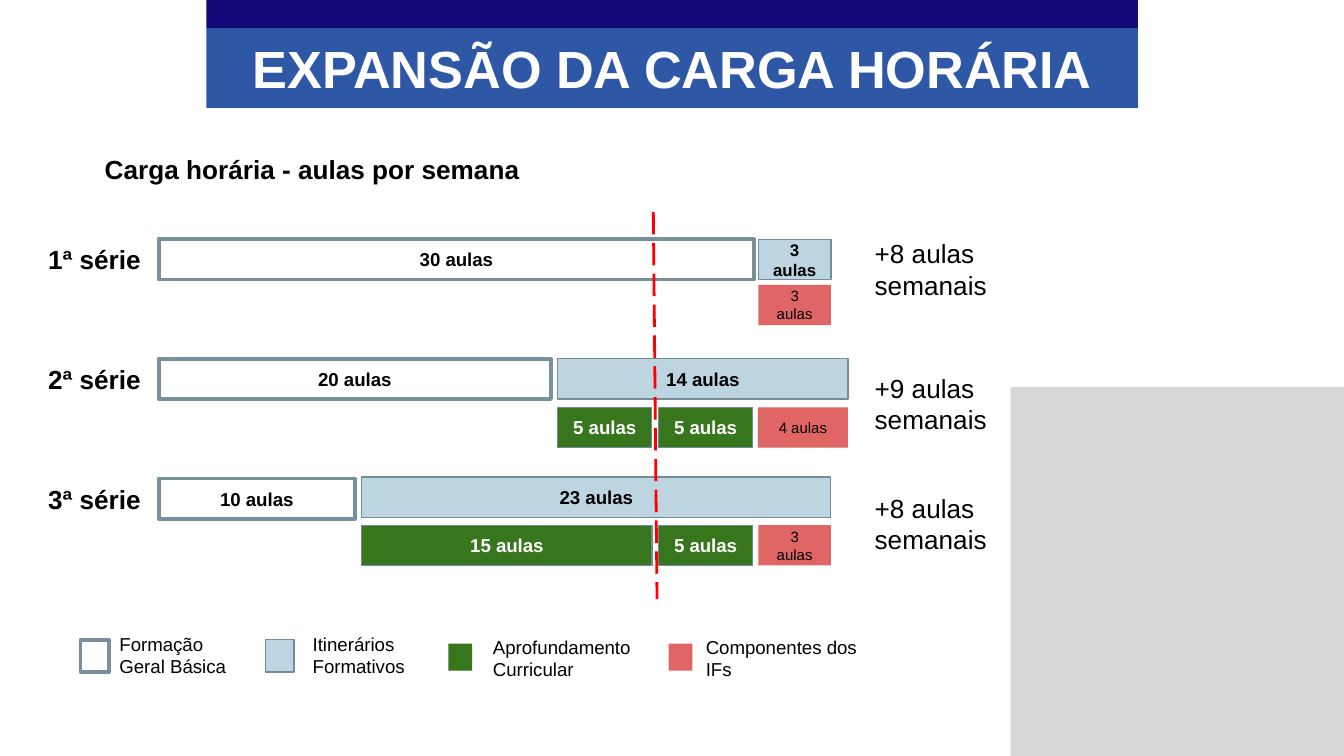
from lxml import etree
from pptx import Presentation
from pptx.dml.color import RGBColor
from pptx.enum.dml import MSO_LINE
from pptx.enum.shapes import MSO_CONNECTOR, MSO_SHAPE
from pptx.enum.text import MSO_ANCHOR, PP_ALIGN
from pptx.oxml.ns import qn
from pptx.util import Pt

RECT = MSO_SHAPE.RECTANGLE
STRAIGHT = MSO_CONNECTOR.STRAIGHT
DASH = MSO_LINE.LONG_DASH
MIDDLE, TOP = MSO_ANCHOR.MIDDLE, MSO_ANCHOR.TOP
LEFT, CENTER = PP_ALIGN.LEFT, PP_ALIGN.CENTER

WIDTH, HEIGHT = 720, 405
BAR = 21.6

COLORS = {
    "black": "000000", "white": "FFFFFF", "navy": "110979", "blue": "2E58A6",
    "sky": "BDD5E1", "green": "38761D", "coral": "E06666", "gray": "BFBFBF",
    "slate": "78909C", "edge": "748C98", "red": "FF0000",
}

# Each kind of class: fill, outline (colour, width) and label font
KINDS = {
    "base": ("white", ("slate", 2), {"size": 10, "bold": True}),
    "path": ("sky", ("edge", 0.75), {"size": 10, "bold": True}),
    "short": ("sky", ("edge", 0.75), {"size": 9, "bold": True}),
    "deep": ("green", ("edge", 0.75),
             {"size": 10, "bold": True, "color": "white"}),
    "part": ("coral", None, {"size": 8}),
}

# Top of bars, year, note, note shift, bars (kind, left, shift, width, label)
YEARS = [
    (128.2, "1ª série", "+8 aulas semanais", -8, [
        ("base", 85, 0, 319, "30 aulas"),
        ("short", 406.3, 0, 38.9, "3 aulas"),
        ("part", 406.3, 24.4, 38.9, "3 aulas")]),
    (192.2, "2ª série", "+9 aulas semanais", 0, [
        ("base", 85, 0, 210.2, "20 aulas"),
        ("path", 298.8, 0, 155.5, "14 aulas"),
        ("deep", 298.8, 26, 50.4, "5 aulas"),
        ("deep", 352.8, 26, 50.4, "5 aulas"),
        ("part", 406.1, 26, 48.2, "4 aulas")]),
    (256.4, "3ª série", "+8 aulas semanais", 0, [
        ("base", 85, 0, 105.1, "10 aulas"),
        ("path", 193.8, -0.8, 251.3, "23 aulas"),
        ("deep", 193.8, 25, 155.5, "15 aulas"),
        ("deep", 352.8, 25, 50.4, "5 aulas"),
        ("part", 406.3, 25, 38.9, "3 aulas")]),
]

# Fill, outline, swatch box, text box, lines
KEYS = [
    ("white", ("slate", 2), (43.2, 342.7, 15.3, 17.3),
     (56.9, 335.5, 75.6, 30.2), ["Formação", "Geral Básica"]),
    ("sky", ("edge", 0.75), (142.3, 342.7, 15.3, 17.3),
     (160.4, 335.5, 70.6, 30.2), ["Itinerários Formativos"]),
    ("green", None, (240.3, 344.9, 12.7, 14.4),
     (257, 337, 99.4, 30.2), ["Aprofundamento Curricular"]),
    ("coral", None, (358.2, 344.9, 12.7, 14.4),
     (371, 337, 99.4, 30.2), ["Componentes dos IFs"]),
]


def rgb(name):
    return RGBColor.from_string(COLORS[name])


def write(shape, lines, size, bold=False, color="black", align=LEFT,
          anchor=TOP, pad=3.6):
    frame = shape.text_frame
    layout = {"word_wrap": True, "vertical_anchor": anchor,
              "margin_left": Pt(7.2), "margin_right": Pt(7.2),
              "margin_top": Pt(pad), "margin_bottom": Pt(pad)}
    for key, value in layout.items():
        setattr(frame, key, value)
    for i, line in enumerate(lines):
        para = frame.paragraphs[0] if i == 0 else frame.add_paragraph()
        para.alignment = align
        run = para.add_run()
        run.text = line
        style = {"name": "Arial", "size": Pt(size), "bold": bold}
        for key, value in style.items():
            setattr(run.font, key, value)
        run.font.color.rgb = rgb(color)


def label(slide, box, lines, size, **style):
    write(slide.shapes.add_textbox(*map(Pt, box)), lines, size, **style)


def block(slide, box, fill, line=None):
    """Add a flat rectangle with an optional outline."""
    shape = slide.shapes.add_shape(RECT, *map(Pt, box))
    shape.shadow.inherit = False
    shape.fill.solid()
    shape.fill.fore_color.rgb = rgb(fill)
    if line:
        shape.line.color.rgb = rgb(line[0])
        shape.line.width = Pt(line[1])
    else:
        shape.line.fill.background()
    return shape


def banner(slide, box):
    x, y, w, h = box
    strip = 15.1
    block(slide, (x, y + strip, w, h - strip), "blue")
    block(slide, (x, y, w, strip), "navy")
    label(slide, (x, y + 15.8, w, 41), ["EXPANSÃO DA CARGA HORÁRIA"], 28,
          bold=True, color="white", align=CENTER)


def panel(slide, box):
    """Add the translucent gray area."""
    shape = block(slide, box, "gray")
    color = shape.fill._xPr.find(qn("a:solidFill"))[0]
    etree.SubElement(color, qn("a:alpha")).set("val", "60000")


def year(slide, box, name, note, shift, bars):
    x, y, w, h = box
    label(slide, (x, y - 4.8, 77, 31.7), [name], 14, bold=True, pad=7.2)
    for kind, left, drop, wide, text in bars:
        fill, line, font = KINDS[kind]
        bar = block(slide, (left, y + drop, wide, h), fill, line)
        write(bar, [text], align=CENTER, anchor=MIDDLE, **font)
    side = 90.7
    label(slide, (x + w - side, y + shift, side, 48.2), [note], 14, pad=7.2)


def limit(slide, start, end):
    """Add the dashed line that marks the former class load."""
    line = slide.shapes.add_connector(STRAIGHT, *map(Pt, start + end))
    line.line.color.rgb = rgb("red")
    line.line.width = Pt(1.5)
    line.line.dash_style = DASH
    etree.SubElement(line._element.spPr, qn("a:effectLst"))


def legend(slide):
    for fill, line, swatch, box, lines in KEYS:
        block(slide, swatch, fill, line)
        label(slide, box, lines, 10)


def main():
    deck = Presentation()
    deck.slide_width, deck.slide_height = Pt(WIDTH), Pt(HEIGHT)
    slide = deck.slides.add_slide(deck.slide_layouts[6])
    panel(slide, (541.4, 207.4, WIDTH - 541.4, HEIGHT - 207.4))
    banner(slide, (110.6, 0, 499, 57.8))
    label(slide, (49, 75, 542, 31.7), ["Carga horária - aulas por semana"],
          14, bold=True, pad=7.2)
    for top, *parts in YEARS:
        year(slide, (18.7, top, 533.5, BAR), *parts)
    limit(slide, (350, 113.6), (352, 321))
    legend(slide)
    deck.save("out.pptx")


if __name__ == "__main__":
    main()
